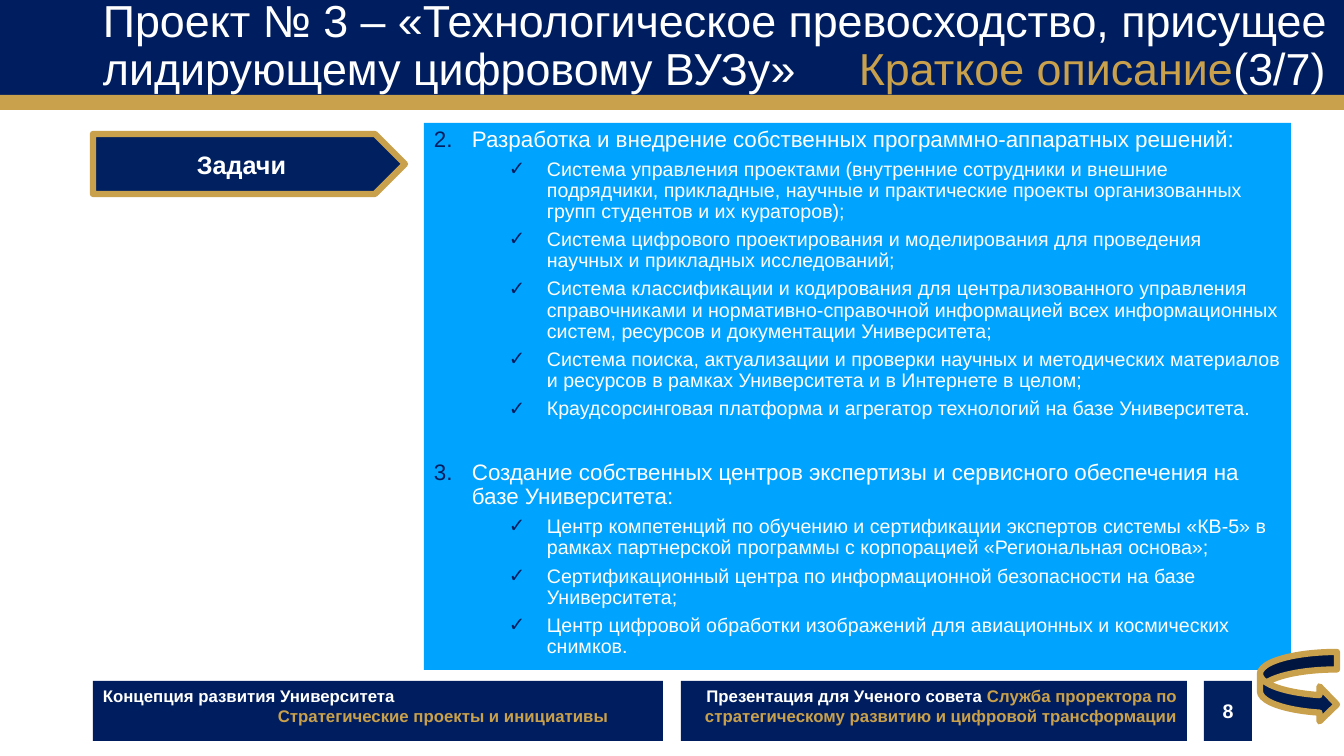
from lxml import etree
from pptx import Presentation
from pptx import util as u
from pptx.dml.color import RGBColor
from pptx.enum import shapes, text
from pptx.oxml.ns import qn

PX = 914400 / 100.8
FONT = "Arial"
COLORS = {
    "band": "001E5F",
    "navy": "002060",
    "arrow": "001B50",
    "gold": "C9A04B",
    "sky": "00A3FE",
    "white": "FFFFFF",
}
SHAPE = shapes.MSO_SHAPE
ALIGN = text.PP_ALIGN
ANCHOR = text.MSO_ANCHOR

TASKS = [
    ("Разработка и внедрение собственных программно-аппаратных решений:", [
        "Система управления проектами (внутренние сотрудники и внешние подрядчики, прикладные, "
        "научные и практические проекты организованных групп студентов и их кураторов);",
        "Система цифрового проектирования и моделирования для проведения научных и прикладных исследований;",
        "Система классификации и кодирования для централизованного управления справочниками и "
        "нормативно-справочной информацией всех информационных систем, ресурсов и документации Университета;",
        "Система поиска, актуализации и проверки научных и методических материалов и ресурсов "
        "в рамках Университета и в Интернете в целом;",
        "Краудсорсинговая платформа и агрегатор технологий на базе Университета.",
    ]),
    ("Создание собственных центров экспертизы и сервисного обеспечения на базе Университета:", [
        "Центр компетенций по обучению и сертификации экспертов системы «КВ-5» в рамках "
        "партнерской программы с корпорацией «Региональная основа»;",
        "Сертификационный центра по информационной безопасности на базе Университета;",
        "Центр цифровой обработки изображений для авиационных и космических снимков.",
    ]),
]


def px(value):
    return u.Emu(round(value * PX))


def color(name):
    return RGBColor.from_string(COLORS[name])


def add_block(slide, kind, box, fill, outline=None, anchor=ANCHOR.TOP):
    shape = slide.shapes.add_shape(kind, *map(px, box))
    shape.shadow.inherit = False
    shape.fill.solid()
    shape.fill.fore_color.rgb = color(fill)
    if outline:
        shape.line.color.rgb = color(outline)
        shape.line.width = u.Pt(4.5)
        etree.SubElement(shape.line._get_or_add_ln(), qn("a:round"))
    else:
        shape.line.fill.background()
    shape.text_frame.word_wrap = True
    shape.text_frame.vertical_anchor = anchor
    return shape


def write(paragraph, runs, size, bold=False, align=ALIGN.LEFT):
    paragraph.alignment = align
    for content, tone in runs:
        run = paragraph.add_run()
        run.text = content
        run.font.name = FONT
        run.font.size = u.Pt(size)
        run.font.bold = bold
        run.font.color.rgb = color(tone)


def indent(paragraph, left, hanging=0):
    properties = paragraph._p.get_or_add_pPr()
    properties.set("marL", str(px(left)))
    properties.set("indent", str(px(-hanging)))
    return properties


def add_bullet(paragraph, left, tag, **attributes):
    properties = indent(paragraph, left, 38)
    bullet_color = etree.SubElement(properties, qn("a:buClr"))
    etree.SubElement(bullet_color, qn("a:srgbClr"), val=COLORS["band"])
    etree.SubElement(properties, qn("a:buFont"), typeface=FONT)
    etree.SubElement(properties, qn(tag), **attributes)


def add_title(slide):
    title = slide.shapes.add_textbox(*map(px, (93, 0, 1251, 94)))
    frame = title.text_frame
    frame.word_wrap = True
    frame.vertical_anchor = ANCHOR.MIDDLE
    paragraph = frame.paragraphs[0]
    paragraph.line_spacing = 0.9
    tabs = etree.SubElement(paragraph._p.get_or_add_pPr(), qn("a:tabLst"))
    etree.SubElement(tabs, qn("a:tab"), pos=str(px(756)), algn="l")
    write(paragraph, [
        ("Проект № 3 – «Технологическое превосходство, присущее лидирующему цифровому ВУЗу»\t", "white"),
        ("Краткое описание", "gold"),
        ("(3/7)", "white"),
    ], 32)


def add_label(slide, kind, box, label, size, outline=None):
    shape = add_block(slide, kind, box, "navy", outline, ANCHOR.MIDDLE)
    write(shape.text_frame.paragraphs[0], [(label, "white")], size, True, ALIGN.CENTER)


def add_footers(slide):
    audience = add_block(slide, SHAPE.RECTANGLE, (681, 681, 506, 60), "band")
    write(audience.text_frame.paragraphs[0], [
        ("Презентация для Ученого совета ", "white"),
        ("Служба проректора по стратегическому развитию и цифровой трансформации", "gold"),
    ], 12, True, ALIGN.RIGHT)
    concept = add_block(slide, SHAPE.RECTANGLE, (93, 681, 570, 60), "band").text_frame
    write(concept.paragraphs[0], [("Концепция развития Университета", "white")], 12, True)
    subtitle = concept.add_paragraph()
    write(subtitle, [("Стратегические проекты и инициативы", "gold")], 12, True)
    indent(subtitle, 175)


def add_tasks(slide):
    frame = add_block(slide, SHAPE.RECTANGLE, (424, 123, 867, 547), "sky").text_frame
    for number, (heading, items) in enumerate(TASKS, 2):
        first = number == 2
        paragraph = frame.paragraphs[0] if first else frame.add_paragraph()
        paragraph.line_spacing = 0.9
        paragraph.space_before = u.Pt(10 if first else 29.5)
        add_bullet(paragraph, 38, "a:buAutoNum", type="arabicPeriod", startAt=str(number))
        write(paragraph, [(heading, "white")], 16)
        for item in items:
            paragraph = frame.add_paragraph()
            paragraph.level = 1
            paragraph.line_spacing = 0.9
            paragraph.space_before = u.Pt(5)
            add_bullet(paragraph, 113, "a:buChar", char="✓")
            write(paragraph, [(item, "white")], 14)


def main():
    presentation = Presentation()
    presentation.slide_width, presentation.slide_height = px(1344), px(756)
    slide = presentation.slides.add_slide(presentation.slide_layouts[6])
    add_block(slide, SHAPE.RECTANGLE, (0, 0, 1344, 95), "band")
    add_block(slide, SHAPE.RECTANGLE, (0, 95, 1344, 15), "gold")
    add_label(slide, SHAPE.PENTAGON, (93, 134, 312, 60), "Задачи", 18, "gold")
    add_label(slide, SHAPE.RECTANGLE, (1204, 681, 48, 60), "8", 14)
    add_title(slide)
    add_footers(slide)
    add_tasks(slide)
    add_block(slide, SHAPE.CURVED_RIGHT_ARROW, (1260, 652, 77, 70), "arrow", "gold")
    presentation.save("out.pptx")


if __name__ == "__main__":
    main()
